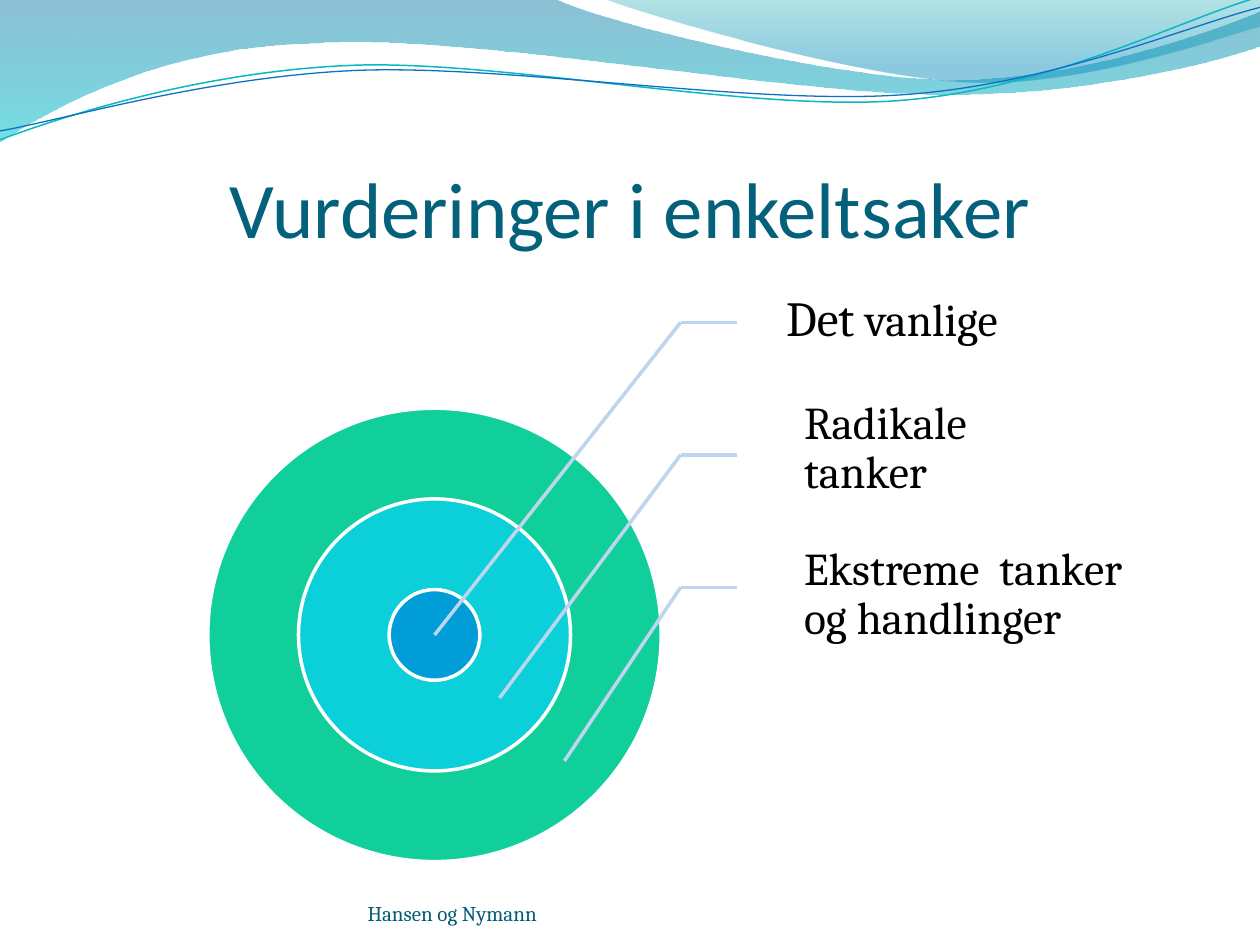
from dataclasses import dataclass
from typing import NamedTuple

from lxml import etree
from pptx import Presentation
from pptx import util as u
from pptx.dml.color import RGBColor
from pptx.enum import shapes, text
from pptx.oxml.ns import qn


@dataclass(frozen=True)
class Theme:
    title: str = "04617B"
    footer: str = "045D75"
    body: str = "000000"
    outline: str = "FFFFFF"
    leader: str = "BDD5ED"
    rings: tuple = ("10CF9B", "0BD0D9", "009DD9")
    heading_font: str = "Calibri"
    body_font: str = "Cambria"
    title_pt: float = 45
    lead_pt: float = 28
    label_pt: float = 26
    footer_pt: float = 12
    line_pt: float = 2


class Stop(NamedTuple):
    position: float
    color: str
    opacity: int


class Wave(NamedTuple):
    start: tuple
    segments: tuple
    stops: tuple = ()
    color: str = ""
    width: float = 0


class Run(NamedTuple):
    text: str
    size: float


class TextBlock(NamedTuple):
    box: tuple
    runs: tuple
    color: str
    font: str
    insets: tuple = (0, 0, 0, 0)
    anchor: text.MSO_ANCHOR = text.MSO_ANCHOR.BOTTOM
    align: text.PP_ALIGN = text.PP_ALIGN.LEFT
    spacing: float = 1.0


THEME = Theme()
CENTER = (8.76, 12.8)
RADIUS = 4.57
RING_SCALES = (1, 0.6, 0.2)
ELBOW_X, LEADER_END_X = 13.72, 14.86
LEADER_Y, LEADER_STEP = 6.5, 2.67
TARGET_STEP = (1.31, 1.27)

WAVES = (
    Wave((0, 0), (
        ((11.18, -0.03),),
        ((12.09, 0.43), (16.87, 1.6), (19.25, 1.6)),
        ((21.67, 1.6), (24.33, 0.66), (25.4, 0.23)),
        ((25.43, 0.91),),
        ((24.97, 1.12), (22.1, 1.93), (18.95, 1.9)),
        ((15.8, 1.9), (9.7, 0.71), (6.53, 0.86)),
        ((3.28, 0.91), (1.17, 2.11), (-0.03, 2.87)),
    ), stops=(Stop(0, "0074A1", 45), Stop(1, "00C6CF", 55))),
    Wave((12.17, -0.03), (
        ((12.93, 0.28), (17.32, 1.57), (19.53, 1.65)),
        ((21.74, 1.75), (24.41, 0.81), (25.4, 0.53)),
        ((25.4, 0),),
    ), stops=(Stop(0, "00A1A9", 30), Stop(0.8, "008BBF", 45))),
    Wave((0, 2.82), (
        ((1.22, 2.36), (4.01, 1.45), (7.04, 1.32)),
        ((10.03, 1.19), (15.06, 2.26), (18.11, 2.03)),
        ((21.16, 1.8), (23.83, 0.38), (25.35, -0.05)),
    ), color="0AB8BF", width=0.85),
    Wave((0, 2.64), (
        ((1.19, 2.44), (4.17, 1.55), (7.19, 1.42)),
        ((10.24, 1.3), (15.16, 2.13), (18.21, 1.91)),
        ((21.23, 1.7), (23.9, 0.53), (25.4, 0.15)),
    ), color="0F6FC6", width=0.75),
)


def label(box: tuple, *runs: Run, indent: float = 0.51) -> TextBlock:
    return TextBlock(box, runs, THEME.body, THEME.body_font,
                     (indent, 0.1, 0.1, 0.1), text.MSO_ANCHOR.MIDDLE, spacing=0.9)


TITLE = TextBlock((1.27, 1.95, 22.86, 3.18),
                  (Run("Vurderinger i enkeltsaker", THEME.title_pt),),
                  THEME.title, THEME.heading_font, (0, 0.13, 0, 0),
                  align=text.PP_ALIGN.CENTER)
LABELS = (
    label((15.29, 5.52, 8.13, 1.88), Run("Det ", THEME.lead_pt),
          Run("vanlige", THEME.label_pt), indent=0.56),
    label((15.7, 7.72, 4.57, 2.67), Run("Radikale tanker", THEME.label_pt)),
    label((15.7, 10.72, 7.11, 2.57),
          Run("Ekstreme  tanker og handlinger", THEME.label_pt)),
)
FOOTER = TextBlock((7.41, 17.65, 9.32, 1.02),
                   (Run("Hansen og Nymann", THEME.footer_pt),),
                   THEME.footer, THEME.body_font)


def rgb(value: str) -> RGBColor:
    return RGBColor.from_string(value)


def bend_segments(sp, segments: tuple) -> None:
    lines = list(sp._element.iter(qn("a:lnTo")))
    for line, segment in zip(lines, segments):
        if len(segment) == 1:
            continue
        curve = etree.Element(qn("a:cubicBezTo"))
        for x, y in segment:
            pt = etree.SubElement(curve, qn("a:pt"))
            pt.set("x", str(u.Cm(x) - sp.left))
            pt.set("y", str(u.Cm(y) - sp.top))
        line.getparent().replace(line, curve)


def draw_wave(s, wave: Wave) -> None:
    anchors = [wave.start, *(segment[-1] for segment in wave.segments)]
    vertices = [(u.Cm(x), u.Cm(y)) for x, y in anchors]
    builder = s.shapes.build_freeform(*vertices[0])
    builder.add_line_segments(vertices[1:], close=bool(wave.stops))
    sp = builder.convert_to_shape()
    bend_segments(sp, wave.segments)
    sp.shadow.inherit = False
    if not wave.stops:
        sp.fill.background()
        sp.line.color.rgb = rgb(wave.color)
        sp.line.width = u.Pt(wave.width)
        return
    sp.line.fill.background()
    sp.fill.gradient()
    sp.fill.gradient_angle = 270
    for target, stop in zip(sp.fill.gradient_stops, wave.stops):
        target.position = stop.position
        target.color.rgb = rgb(stop.color)
    for color, stop in zip(sp._element.iter(qn("a:srgbClr")), wave.stops):
        etree.SubElement(color, qn("a:alpha")).set("val", str(stop.opacity * 1000))


def draw_ring(s, scale: float, color: str) -> None:
    r = RADIUS * scale
    sp = s.shapes.add_shape(shapes.MSO_SHAPE.OVAL, u.Cm(CENTER[0] - r),
                            u.Cm(CENTER[1] - r), u.Cm(2 * r), u.Cm(2 * r))
    sp.shadow.inherit = False
    sp.fill.solid()
    sp.fill.fore_color.rgb = rgb(color)
    sp.line.color.rgb = rgb(THEME.outline)
    sp.line.width = u.Pt(THEME.line_pt)


def draw_leader(s, index: int) -> None:
    y = LEADER_Y + index * LEADER_STEP
    target = [c + index * step for c, step in zip(CENTER, TARGET_STEP)]
    for end in ((LEADER_END_X, y), target):
        line = s.shapes.add_connector(shapes.MSO_CONNECTOR.STRAIGHT, u.Cm(ELBOW_X),
                                      u.Cm(y), u.Cm(end[0]), u.Cm(end[1]))
        line.line.color.rgb = rgb(THEME.leader)
        line.line.width = u.Pt(THEME.line_pt)
        etree.SubElement(line._element.spPr, qn("a:effectLst"))


def draw_text(s, block: TextBlock) -> None:
    tf = s.shapes.add_textbox(*map(u.Cm, block.box)).text_frame
    tf.word_wrap = True
    tf.vertical_anchor = block.anchor
    (tf.margin_left, tf.margin_top,
     tf.margin_right, tf.margin_bottom) = map(u.Cm, block.insets)
    p = tf.paragraphs[0]
    p.text = block.runs[0].text
    for extra in block.runs[1:]:
        p.add_run().text = extra.text
    p.alignment = block.align
    p.line_spacing = block.spacing
    for r, run in zip(p.runs, block.runs):
        r.font.size = u.Pt(run.size)
        r.font.name = block.font
        r.font.color.rgb = rgb(block.color)


def main() -> None:
    prs = Presentation()
    prs.slide_width, prs.slide_height = u.Cm(25.4), u.Cm(19.05)
    s = prs.slides.add_slide(prs.slide_layouts[6])
    for wave in WAVES:
        draw_wave(s, wave)
    draw_text(s, TITLE)
    for scale, color in zip(RING_SCALES, THEME.rings):
        draw_ring(s, scale, color)
    for index, block in enumerate(LABELS):
        draw_text(s, block)
        draw_leader(s, index)
    draw_text(s, FOOTER)
    prs.save("out.pptx")


if __name__ == "__main__":
    main()
